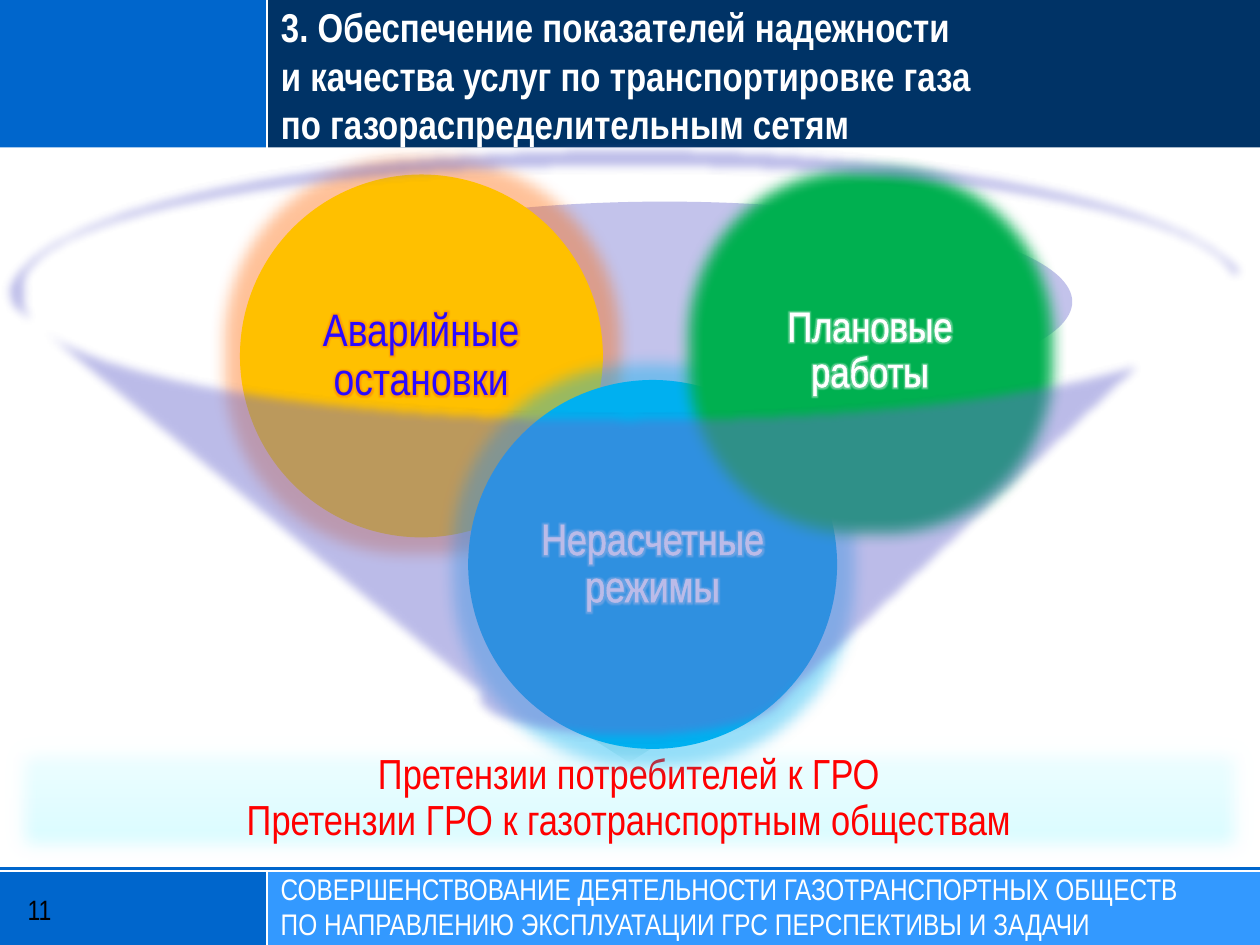
from lxml import etree
from pptx import Presentation
from pptx.dml.color import RGBColor
from pptx.enum.shapes import MSO_CONNECTOR, MSO_SHAPE
from pptx.enum.text import MSO_ANCHOR, PP_ALIGN
from pptx.oxml import parse_xml
from pptx.oxml.ns import nsdecls, qn
from pptx.util import Inches, Pt

STRAIGHT = MSO_CONNECTOR.STRAIGHT
RECT, OVAL = MSO_SHAPE.RECTANGLE, MSO_SHAPE.OVAL
ARROW, FUNNEL = MSO_SHAPE.DOWN_ARROW, MSO_SHAPE.FUNNEL
TOP, MIDDLE = MSO_ANCHOR.TOP, MSO_ANCHOR.MIDDLE
LEFT, CENTER = PP_ALIGN.LEFT, PP_ALIGN.CENTER

WHITE = RGBColor(0xFF, 0xFF, 0xFF)
BLACK = RGBColor(0x00, 0x00, 0x00)
BLUE = RGBColor(0x00, 0x66, 0xCC)
NAVY = RGBColor(0x00, 0x33, 0x66)
FOOTER_BLUE = RGBColor(0x33, 0x99, 0xFF)
LILAC = RGBColor(0x6B, 0x6B, 0xCF)
INDIGO = RGBColor(0x2A, 0x2A, 0x89)
PALE = RGBColor(0xDA, 0xED, 0xEF)
BAND_LINE = RGBColor(0xB6, 0xDC, 0xDF)
GOLD = RGBColor(0xFF, 0xC0, 0x00)
ORANGE = RGBColor(0xFF, 0x66, 0x00)
SKY = RGBColor(0x00, 0xB0, 0xF0)
GREEN = RGBColor(0x00, 0xB0, 0x50)
VIOLET = RGBColor(0x2C, 0x09, 0xFF)
RED = RGBColor(0xFF, 0x00, 0x00)
BAND_STOPS = [(0, "D3FBFF"), (35, "DFFCFF"), (100, "F2FEFF")]

FONT = "Arial Narrow"
SIDE = 2.12  # width of the left column


def add_block(slide, kind, box, fill, line=None, width=0.75, opacity=None):
    block = slide.shapes.add_shape(kind, *map(Inches, box))
    block.shadow.inherit = False
    block.fill.solid()
    block.fill.fore_color.rgb = fill
    if opacity:
        color = block.fill._xPr.find(qn("a:solidFill"))[0]
        etree.SubElement(color, qn("a:alpha"), val=str(opacity * 1000))
    if line is None:
        block.line.fill.background()
    else:
        block.line.color.rgb = line
        block.line.width = Pt(width)
    return block


def add_rule(slide, x1, y1, x2, y2):
    rule = slide.shapes.add_connector(STRAIGHT, *map(Inches, (x1, y1, x2, y2)))
    rule.line.color.rgb = WHITE
    rule.line.width = Pt(1.25)
    etree.SubElement(rule._element.spPr, qn("a:effectLst"))


def glow(color, radius, opacity):
    return parse_xml(
        f'<a:glow {nsdecls("a")} rad="{Inches(radius)}"><a:srgbClr val="{color}">'
        f'<a:alpha val="{opacity * 1000}"/></a:srgbClr></a:glow>')


def soft_edge(radius):
    return parse_xml(f'<a:softEdge {nsdecls("a")} rad="{Inches(radius)}"/>')


def add_effect(shape, effect):
    shape._element.spPr.find(qn("a:effectLst")).append(effect)


def write(shape, text, size, color, align=LEFT, anchor=TOP, inset=None,
          spacing=None, bold=False):
    frame = shape.text_frame
    frame.word_wrap = True
    frame.vertical_anchor = anchor
    if inset is not None:
        frame.margin_left = frame.margin_right = Inches(inset)
        frame.margin_top = frame.margin_bottom = Inches(inset)
    frame.text = text
    for paragraph in frame.paragraphs:
        paragraph.alignment = align
        paragraph.line_spacing = spacing
        for run in paragraph.runs:
            run.font.name = FONT
            run.font.size = Pt(size)
            run.font.bold = bold
            run.font.color.rgb = color


def outline_text(shape, color, halo):
    """Give each run a thin outline and a soft halo."""
    for run in shape.text_frame.paragraphs[0].runs:
        properties = run.font._element
        properties.insert(0, parse_xml(
            f'<a:ln {nsdecls("a")} w="{Pt(0.75)}"><a:solidFill>'
            f'<a:srgbClr val="{color}"/></a:solidFill></a:ln>'))
        effects = etree.Element(qn("a:effectLst"))
        effects.append(glow(halo, 0.07, 40))
        properties.insert(2, effects)


def add_frame(slide):
    # Footer, header and white content area
    add_block(slide, RECT, (SIDE, 6.91, 10 - SIDE, 0.59), FOOTER_BLUE)
    add_rule(slide, SIDE, 6.91, SIDE, 7.5)
    add_block(slide, RECT, (0, 0, SIDE, 1.18), BLUE)
    add_block(slide, RECT, (SIDE, 0, 10 - SIDE, 1.18), NAVY)
    add_rule(slide, SIDE, 0, SIDE, 1.18)
    add_rule(slide, 0, 6.91, 10, 6.91)
    add_block(slide, RECT, (0, 1.17, 10, 5.71), WHITE)
    add_rule(slide, 0, 1.18, 10, 1.18)

    # Page number and footer wording
    number = slide.shapes.add_textbox(*map(Inches, (0.22, 6.96, 1.63, 0.52)))
    write(number, "11", 16, BLACK, anchor=MIDDLE, inset=0)
    footer = slide.shapes.add_textbox(*map(Inches, (2.13, 6.86, 7.87, 0.67)))
    write(footer, "СОВЕРШЕНСТВОВАНИЕ ДЕЯТЕЛЬНОСТИ ГАЗОТРАНСПОРТНЫХ ОБЩЕСТВ\n"
                  "ПО НАПРАВЛЕНИЮ ЭКСПЛУАТАЦИИ ГРС ПЕРСПЕКТИВЫ И ЗАДАЧИ", 17, WHITE)


def add_claims(slide, box):
    claims = add_block(slide, RECT, box, PALE, BAND_LINE)
    stops = "".join(f'<a:gs pos="{pos * 1000}"><a:srgbClr val="{color}"/></a:gs>'
                    for pos, color in BAND_STOPS)
    properties = claims._element.spPr
    properties.replace(properties.find(qn("a:solidFill")), parse_xml(
        f'<a:gradFill {nsdecls("a")} rotWithShape="1"><a:gsLst>{stops}</a:gsLst>'
        '<a:lin ang="16200000" scaled="0"/></a:gradFill>'))
    add_effect(claims, soft_edge(0.17))
    write(claims, "Претензии потребителей к ГРО\v"
                  "Претензии ГРО к газотранспортным обществам",
          24, RED, CENTER, MIDDLE, 0.19, 0.9)


def add_cause(slide, left, top, size, text, text_size, text_color, fill,
              line_width, halo, halo_opacity, text_halo):
    cause = add_block(slide, OVAL, (left, top, size, size), fill, fill, line_width)
    add_effect(cause, glow(halo, 0.25, halo_opacity))
    write(cause, text, text_size, text_color, CENTER, MIDDLE, 0.03, 0.9)
    outline_text(cause, text_color, text_halo)


def add_funnel(slide, box):
    left, top, width, height = box
    add_block(slide, OVAL, (left + 2.03, top + 0.46, 6.47, 1.59), LILAC, opacity=40)
    add_block(slide, ARROW, (left + 4.54, top + 4.36, 0.89, 0.57), PALE, WHITE, 2)
    add_claims(slide, (0, top + 4.66, 9.98, 1.08))

    # Causes falling into the funnel
    causes = [
        (1.9, 0.25, 2.87, "Аварийные\vостановки", 26, VIOLET, GOLD, 0.75,
         ORANGE, 40, ORANGE),
        (3.72, 1.89, 2.9, "Нерасчетные\vрежимы", 25, WHITE, SKY, 2,
         SKY, 40, WHITE),
        (5.59, 0.34, 2.61, "Плановые\vработы", 24, WHITE, GREEN, 0.75,
         GREEN, 100, WHITE),
    ]
    for dx, dy, *details in causes:
        add_cause(slide, left + dx, top + dy, *details)

    funnel = add_block(slide, FUNNEL, box, LILAC, INDIGO, opacity=45)
    add_effect(funnel, soft_edge(0.07))


def add_title(slide, box):
    title = slide.shapes.title
    title.left, title.top, title.width, title.height = map(Inches, box)
    write(title, "3. Обеспечение показателей надежности\v"
                 "и качества услуг по транспортировке газа\v"
                 "по газораспределительным сетям", 23, WHITE, bold=True)
    slide.shapes._spTree.append(title._element)  # bring to front


def main():
    prs = Presentation()
    prs.slide_width, prs.slide_height = Inches(10), Inches(7.5)
    slide = prs.slides.add_slide(prs.slide_layouts[5])
    slide.background.fill.solid()
    slide.background.fill.fore_color.rgb = BLUE
    add_frame(slide)
    add_funnel(slide, (0.01, 1.14, 9.97, 4.76))
    add_title(slide, (2.13, -0.03, 7.85, 1.26))
    prs.save("out.pptx")


if __name__ == "__main__":
    main()
